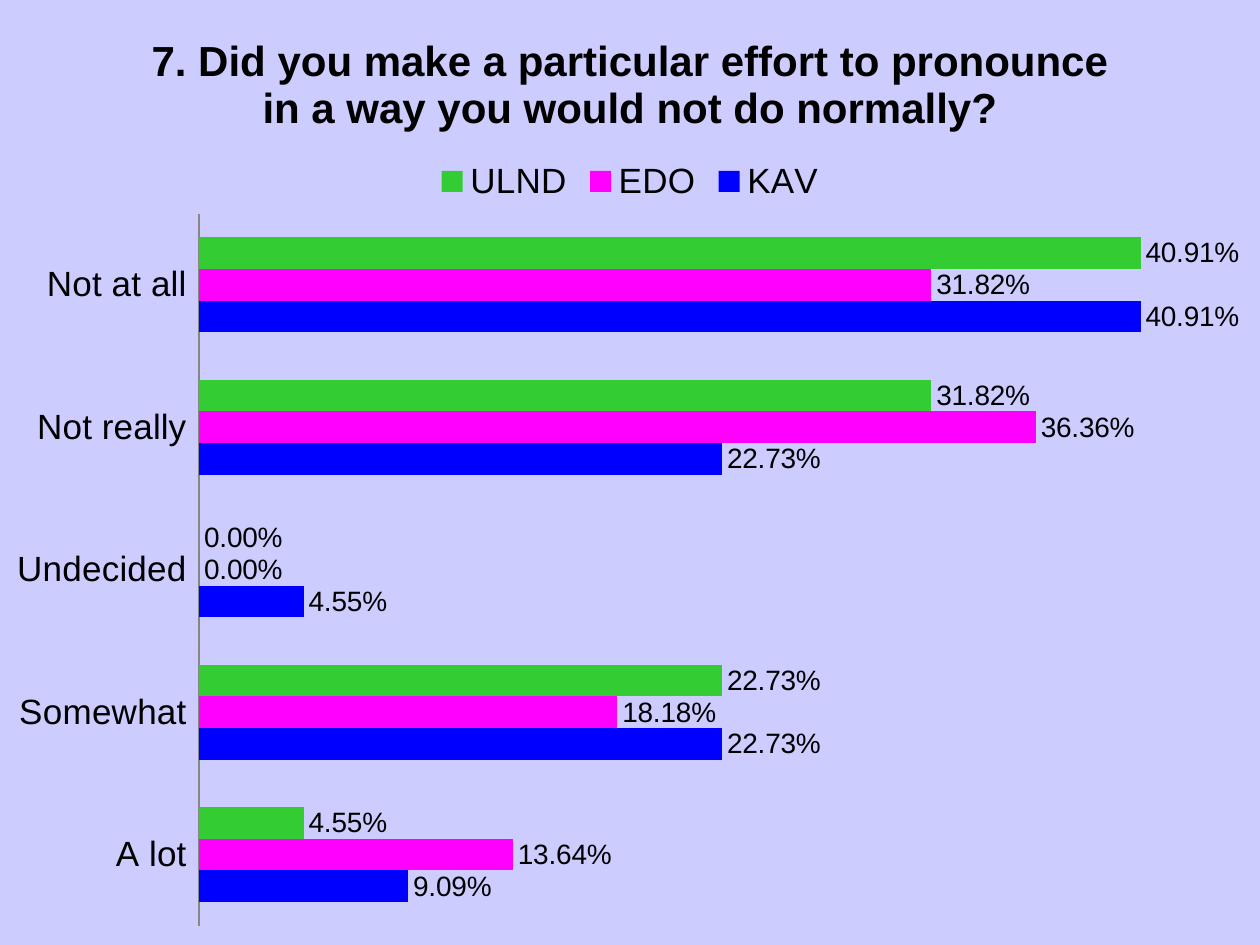
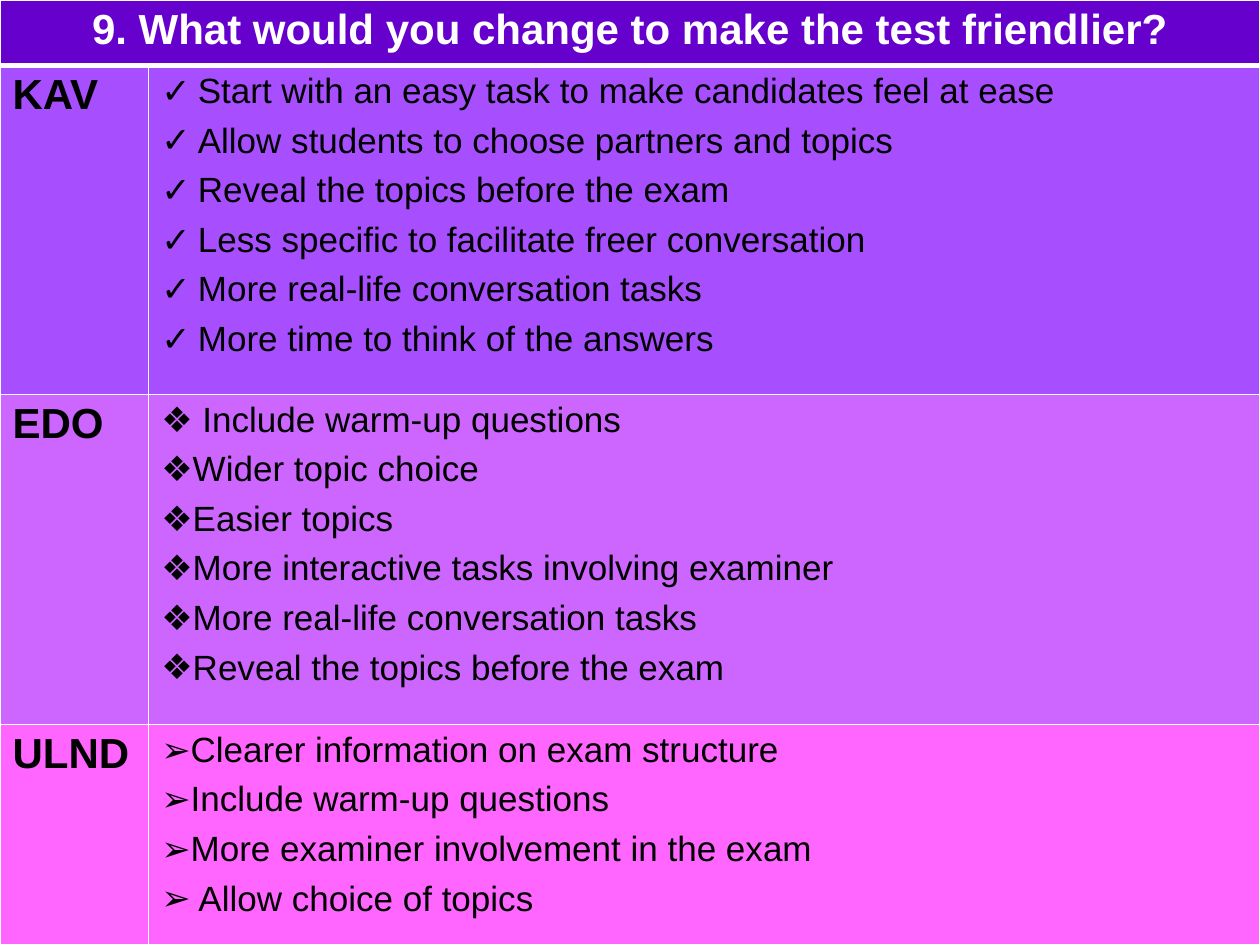
from lxml.etree import SubElement
from pptx import Presentation
from pptx.chart.data import CategoryChartData
from pptx.dml.color import RGBColor
from pptx.enum.chart import (XL_CHART_TYPE as ChartType, XL_LABEL_POSITION as LabelPosition,
                             XL_LEGEND_POSITION as LegendPosition, XL_TICK_LABEL_POSITION as TickLabels,
                             XL_TICK_MARK as TickMark)
from pptx.enum.text import PP_ALIGN as Align
from pptx.oxml import parse_xml
from pptx.oxml.ns import nsdecls, qn
from pptx.util import Inches, Pt

COLORS = {
    "text": "000000", "white": "FFFFFF", "axis": "868686", "chart back": "CCCCFF",
    "KAV bar": "0000FF", "EDO bar": "FF00FF", "ULND bar": "33CC33",
    "header": "6600CC", "KAV row": "A74FFF", "EDO row": "CC66FF", "ULND row": "FF66FF",
}
FONT = "Arial"
TITLE_SIZE, BODY_SIZE, LABEL_SIZE = 24, 20, 16
PERCENT = "0.00%"


def style(font, size, color="text", bold=False):
    font.name, font.size, font.bold = FONT, Pt(size), bold
    font.color.rgb = RGBColor.from_string(COLORS[color])


def fill_cell(cell, color, bottom_width=1):
    cell.fill.solid()
    cell.fill.fore_color.rgb = RGBColor.from_string(COLORS[color])
    widths = {"lnL": 1, "lnR": 1, "lnT": 1, "lnB": bottom_width}
    for place, (side, width) in enumerate(widths.items()):
        line = parse_xml(
            f'<a:{side} {nsdecls("a")} w="{Pt(width)}"><a:solidFill>'
            f'<a:srgbClr val="{COLORS["white"]}"/></a:solidFill></a:{side}>')
        cell._tc.get_or_add_tcPr().insert(place, line)


deck = Presentation()
deck.slide_width, deck.slide_height = Inches(10), Inches(7.5)
full_slide = (0, 0, deck.slide_width, deck.slide_height)
blank = deck.slide_layouts[6]

# Slide 1: bar chart of answers by test
page = deck.slides.add_slide(blank)
answers = CategoryChartData(number_format=PERCENT)
answers.categories = ["A lot", "Somewhat", "Undecided", "Not really", "Not at all"]
answers.add_series("KAV", [0.0909, 0.2273, 0.0455, 0.2273, 0.4091])
answers.add_series("EDO", [0.1364, 0.1818, 0, 0.3636, 0.3182])
answers.add_series("ULND", [0.0455, 0.2273, 0, 0.3182, 0.4091])
chart = page.shapes.add_chart(ChartType.BAR_CLUSTERED, *full_slide, answers).chart
style(chart.font, 10)

# Chart title and legend
chart.has_title = True
heading = chart.chart_title.text_frame
heading.text = "7. Did you make a particular effort to pronounce in a way you would not do normally?"
style(heading.paragraphs[0].font, TITLE_SIZE, bold=True)
chart.has_legend = True
chart.legend.position = LegendPosition.TOP
chart.legend.include_in_layout = False
style(chart.legend.font, BODY_SIZE)

# Axes
answer_axis, share_axis = chart.category_axis, chart.value_axis
answer_axis.major_tick_mark = answer_axis.minor_tick_mark = TickMark.NONE
answer_axis.tick_label_position = TickLabels.LOW
answer_axis.format.line.color.rgb = RGBColor.from_string(COLORS["axis"])
answer_axis.format.line.width = Pt(0.75)
style(answer_axis.tick_labels.font, BODY_SIZE)
share_axis.minimum_scale, share_axis.maximum_scale = 0, 0.45
share_axis.has_major_gridlines = False
share_axis.visible = False

# Bars and their labels
plot = chart.plots[0]
plot.gap_width, plot.overlap, plot.vary_by_categories = 150, 0, False
for series in plot.series:
    series.format.fill.solid()
    series.format.fill.fore_color.rgb = RGBColor.from_string(COLORS[f"{series.name} bar"])
    labels = series.data_labels
    labels.show_value = True
    labels.number_format, labels.number_format_is_linked = PERCENT, False
    labels.position = LabelPosition.OUTSIDE_END
    style(labels.font, LABEL_SIZE)

# Plot area as shares of the slide, and the chart background
plot_area = chart._chartSpace.chart.plotArea
for old_layout in plot_area.findall(qn("c:layout")):
    plot_area.remove(old_layout)
plot_area.insert(0, parse_xml(
    f'<c:layout {nsdecls("c")}><c:manualLayout><c:layoutTarget val="inner"/>'
    '<c:xMode val="edge"/><c:yMode val="edge"/><c:x val="0.158"/><c:y val="0.226"/>'
    '<c:w val="0.822"/><c:h val="0.754"/></c:manualLayout></c:layout>'))
chart._chartSpace.chart.addnext(parse_xml(
    f'<c:spPr {nsdecls("c", "a")}><a:solidFill><a:srgbClr val="{COLORS["chart back"]}"/>'
    '</a:solidFill><a:ln><a:noFill/></a:ln></c:spPr>'))

# Slide 2: table of suggestions; each test has a bullet, a hanging indent and its items
suggestions = {
    "KAV": ("✓", 0.29, [
        "Start with an easy task to make candidates feel at ease",
        "Allow students to choose partners and topics",
        "Reveal the topics before the exam",
        "Less specific to facilitate freer conversation",
        "More real-life conversation tasks",
        "More time to think of the answers"]),
    "EDO": ("❖", 0, [
        " Include warm-up questions",
        "Wider topic choice",
        "Easier topics",
        "More interactive tasks involving examiner",
        "More real-life conversation tasks",
        "Reveal the topics before the exam"]),
    "ULND": ("➢", 0, [
        "Clearer information on exam structure",
        "Include warm-up questions",
        "More examiner involvement in the exam",
        " Allow choice of topics"]),
}
page = deck.slides.add_slide(blank)
table = page.shapes.add_table(1 + len(suggestions), 2, *full_slide).table
for column, width in zip(table.columns, [1.18, 8.82]):
    column.width = Inches(width)
for row, height in zip(table.rows, [0.52, 2.61, 2.62, 1.75]):
    row.height = Inches(height)

# Header across both columns
header = table.cell(0, 0)
header.merge(table.cell(0, 1))
for cell in table.rows[0].cells:
    fill_cell(cell, "header", bottom_width=3)
header.text = "9. What would you change to make the test friendlier?"
para = header.text_frame.paragraphs[0]
para.alignment = Align.CENTER
style(para.font, TITLE_SIZE, "white", bold=True)

# One row per test
for row, (test, (bullet, hang, items)) in enumerate(suggestions.items(), start=1):
    name_cell, list_cell = table.cell(row, 0), table.cell(row, 1)
    for cell in (name_cell, list_cell):
        fill_cell(cell, f"{test} row")
    name_cell.text = test
    style(name_cell.text_frame.paragraphs[0].font, TITLE_SIZE, bold=True)
    list_cell.text = "\n".join(items)
    for para in list_cell.text_frame.paragraphs:
        style(para.font, BODY_SIZE)
        para.space_after = Pt(6)
        properties = para._p.get_or_add_pPr()
        properties.set("marL", str(Inches(hang)))
        properties.set("indent", str(-Inches(hang)))
        defaults = properties.find(qn("a:defRPr"))
        defaults.addprevious(SubElement(properties, qn("a:buFont"), typeface=FONT))
        defaults.addprevious(SubElement(properties, qn("a:buChar"), char=bullet))

deck.save("out.pptx")
